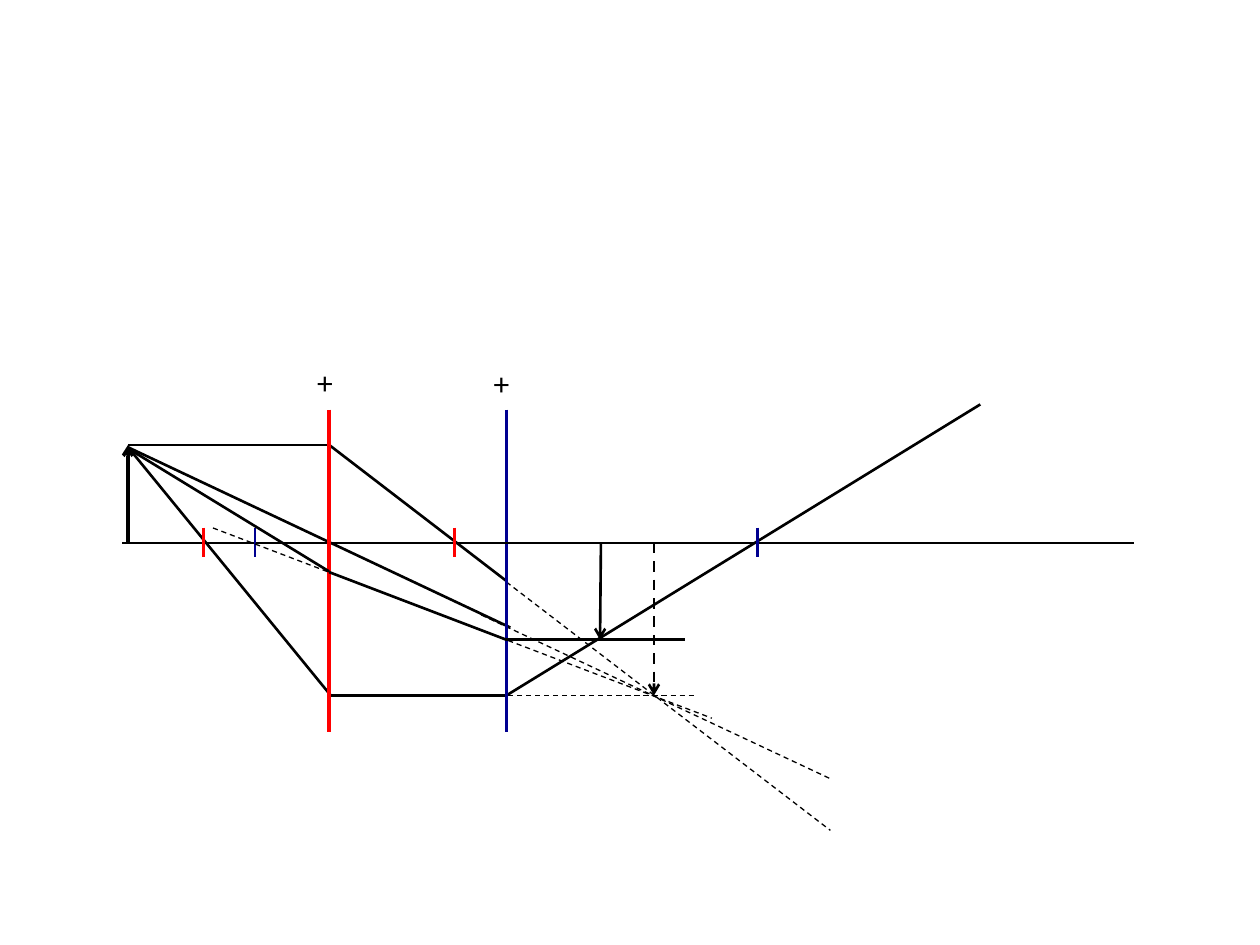
from lxml import etree
from pptx import Presentation, util as u
from pptx.dml.color import RGBColor
from pptx.enum import dml, shapes, text
from pptx.oxml.ns import qn

BLACK = RGBColor(0, 0, 0)
RED = RGBColor(0xFF, 0, 0)
NAVY = RGBColor(0, 0, 0x90)

# Positions in points
AXIS = 310.2
OBJ, TIP = 73.2, 254.2
LOW, MID = 397.4, 365.6       # heights of the first and the final image
LENS1, LENS2 = 188, 289.4
FOCUS1, FOCUS2 = 71.7, 143.6  # focal lengths
IMG1, IMG2 = 373.7, 342.9


class Sketch:
    font, size = "Calibri", 18
    thin, ray, bold = 0.75, 1.5, 2

    def __init__(self, slide):
        self.slide = slide

    def line(self, x1, y1, x2, y2, color=BLACK, width=ray, dash=False, head=False):
        ends = [u.Pt(v) for v in (x1, y1, x2, y2)]
        item = self.slide.shapes.add_connector(shapes.MSO_CONNECTOR.STRAIGHT, *ends)
        item.line.color.rgb = color
        item.line.width = u.Pt(width)
        if dash:
            item.line.dash_style = dml.MSO_LINE.DASH
        props = item._element.spPr
        if head:
            etree.SubElement(props.find(qn("a:ln")), qn("a:tailEnd"), type="arrow")
        etree.SubElement(props, qn("a:effectLst"))

    def trace(self, *ends):
        """Draw the dashed extension of a ray."""
        self.line(*ends, width=self.thin, dash=True)

    def lens(self, x, color):
        self.line(x, 234, x, 418.4, color, self.bold)

    def foci(self, x, length, color):
        for spot in (x - length, x + length):
            self.line(spot, AXIS - 8.7, spot, AXIS + 8.2, color)

    def label(self, x, y, words):
        box = self.slide.shapes.add_textbox(u.Pt(x), u.Pt(y), u.Pt(26.6), u.Pt(28.8))
        frame = box.text_frame
        frame.word_wrap = True
        frame.auto_size = text.MSO_AUTO_SIZE.SHAPE_TO_FIT_TEXT
        run = frame.paragraphs[0].add_run()
        run.text = words
        run.font.name, run.font.size = self.font, u.Pt(self.size)
        run.font.color.rgb = BLACK


def main():
    deck = Presentation()
    deck.slide_width, deck.slide_height = u.Pt(720), u.Pt(540)
    art = Sketch(deck.slides.add_slide(deck.slide_layouts[6]))

    # Rays from the object through the first lens
    art.line(OBJ, TIP, LENS1, TIP)
    art.line(LENS1, TIP, LENS2, 332)
    art.line(OBJ, 255.6, 291.6, 358.6)
    art.line(OBJ, 255.6, LENS1 + 1, LOW)
    art.line(LENS1, LOW, LENS2, LOW)

    # Extensions to the first image
    art.trace(LENS2, 332.6, 474.5, 474.5)
    art.trace(275, 351.4, 474.5, 445)
    art.trace(254.2, LOW, 398.2, LOW)
    art.line(IMG1, AXIS, IMG1, LOW, dash=True, head=True)

    # Final image
    art.line(LENS2, LOW, 560.2, 231.1)
    art.line(343.4, AXIS, IMG2, MID, head=True)

    # Lenses, axis and object
    art.lens(LENS2, NAVY)
    art.line(69.8, AXIS, 648, AXIS)
    art.lens(LENS1, RED)
    art.foci(LENS1, FOCUS1, RED)
    art.line(OBJ, AXIS, OBJ, TIP, width=art.bold, head=True)
    art.foci(LENS2, FOCUS2, NAVY)
    art.label(174.2, 203.8, "+")
    art.label(275, 204.5, "+")

    # Ray that leaves the second lens parallel to the axis
    art.line(LENS1, 326.9, LENS2, MID)
    art.trace(121.7, 301.7, 406.8, 410.4)
    art.line(OBJ, 256.3, LENS1, 326.5)
    art.line(LENS2, MID, 391.7, MID)

    deck.save("out.pptx")


if __name__ == "__main__":
    main()
